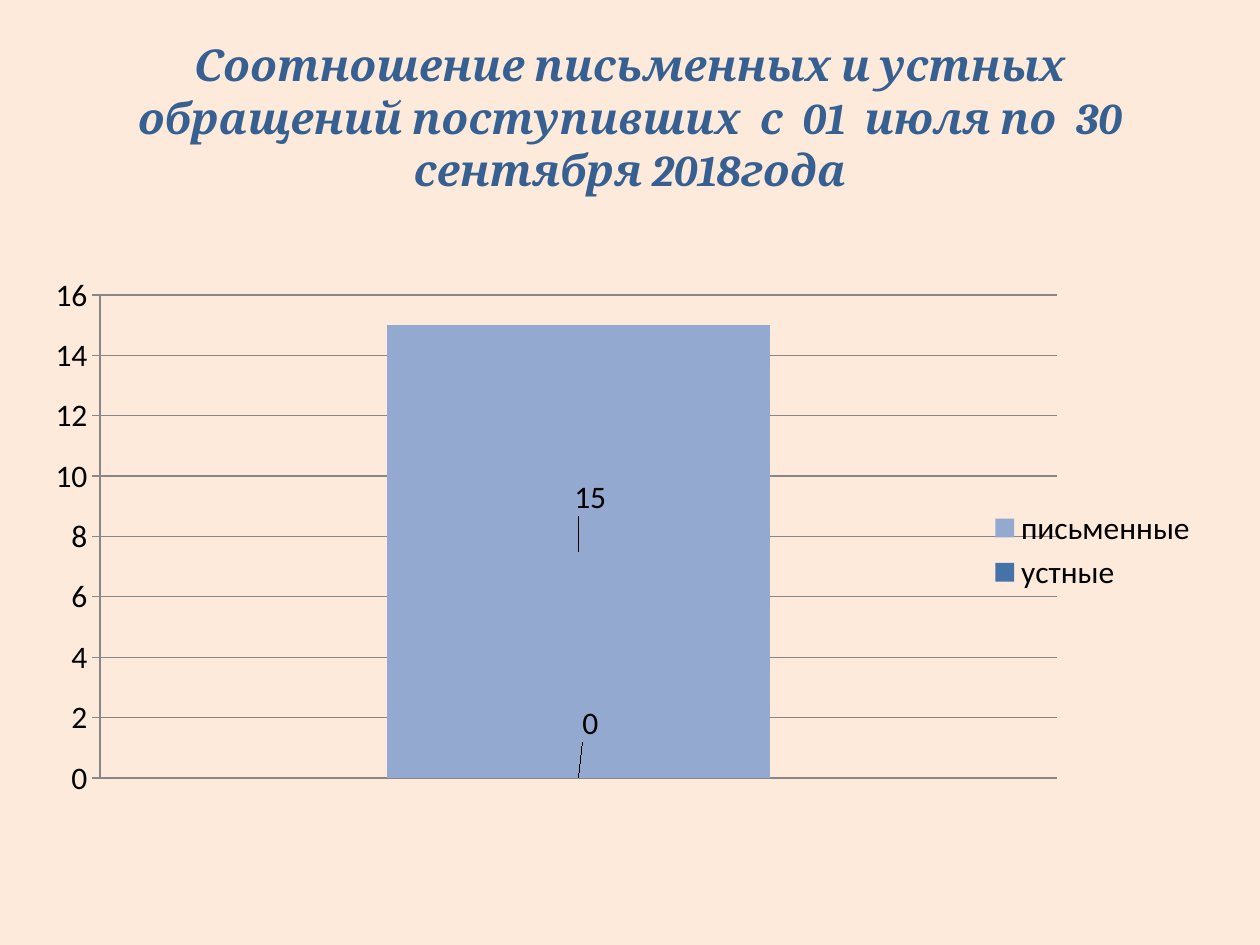
"""Build a slide with a stacked column chart of written and oral appeals."""
from lxml import etree
from pptx import Presentation
from pptx.chart.data import CategoryChartData
from pptx.dml.color import RGBColor
from pptx.enum import chart as kinds, text
from pptx.oxml import ns
from pptx.util import Inches, Pt

BACKGROUND = RGBColor(0xFD, 0xEA, 0xDA)
TITLE_BLUE = RGBColor(0x37, 0x60, 0x92)
BLACK = RGBColor(0, 0, 0)
GREY = RGBColor(0x87, 0x87, 0x87)
ORAL_BLUE = RGBColor(0x45, 0x72, 0xA7)
WRITTEN_BLUE = RGBColor(0x93, 0xA9, 0xCF)


def make_layout(**settings):
    layout = etree.Element(ns.qn("c:layout"))
    manual = etree.SubElement(layout, ns.qn("c:manualLayout"))
    for name, value in settings.items():
        etree.SubElement(manual, ns.qn("c:" + name)).set("val", str(value))
    return layout


deck = Presentation()
deck.slide_width, deck.slide_height = Inches(10), Inches(7.5)
page = deck.slides.add_slide(deck.slide_layouts[6])
page.background.fill.solid()
page.background.fill.fore_color.rgb = BACKGROUND

title = page.shapes.add_textbox(Inches(0.5), Inches(0.3), Inches(9), Inches(1.25))
title.text_frame.word_wrap = True
title.text_frame.vertical_anchor = text.MSO_ANCHOR.MIDDLE
para = title.text_frame.paragraphs[0]
para.alignment = text.PP_ALIGN.CENTER
span = para.add_run()
span.text = "Соотношение письменных и устных обращений поступивших  с  01  июля по  30 сентября 2018года"
span.font.name, span.font.size = "Cambria", Pt(25)
span.font.bold = span.font.italic = True
span.font.color.rgb = TITLE_BLUE

appeals = CategoryChartData()
appeals.categories = ["1"]
appeals.add_series("устные", [0])
appeals.add_series("письменные", [15])
chart = page.shapes.add_chart(
    kinds.XL_CHART_TYPE.COLUMN_STACKED,
    Inches(0.23), Inches(2.19), Inches(9.38), Inches(4.33), appeals,
).chart
chart.has_title = False
chart.font.name, chart.font.size = "Calibri", Pt(18)
chart.font.color.rgb = BLACK
chart.has_legend = True
chart.legend.position = kinds.XL_LEGEND_POSITION.RIGHT
chart.legend.include_in_layout = False

chart.category_axis.visible = False
axis = chart.value_axis
axis.minimum_scale, axis.maximum_scale, axis.major_unit = 0, 16, 2
axis.major_tick_mark = kinds.XL_TICK_MARK.OUTSIDE
axis.has_major_gridlines = True
for line in (axis.format.line, axis.major_gridlines.format.line):
    line.color.rgb = GREY
    line.width = Pt(0.75)

plot = chart.plots[0]
plot.gap_width, plot.overlap, plot.vary_by_categories = 150, 100, False
styles = [(ORAL_BLUE, 0.01, -0.1), (WRITTEN_BLUE, 0.01, -0.1)]
for series, (color, shift_x, shift_y) in zip(plot.series, styles):
    series.format.fill.solid()
    series.format.fill.fore_color.rgb = color
    series.data_labels.show_value = True
    series.points[0].data_label.position = kinds.XL_LABEL_POSITION.CENTER
    label = series.data_labels._element.find(ns.qn("c:dLbl"))
    label.find(ns.qn("c:idx")).addnext(make_layout(x=shift_x, y=shift_y))

area = chart._chartSpace.find(".//" + ns.qn("c:plotArea"))
for old in area.findall(ns.qn("c:layout")):
    area.remove(old)
area.insert(0, make_layout(layoutTarget="inner", xMode="edge", yMode="edge",
                           x=0.06, y=0.03, w=0.81, h=0.89))

deck.save("out.pptx")
